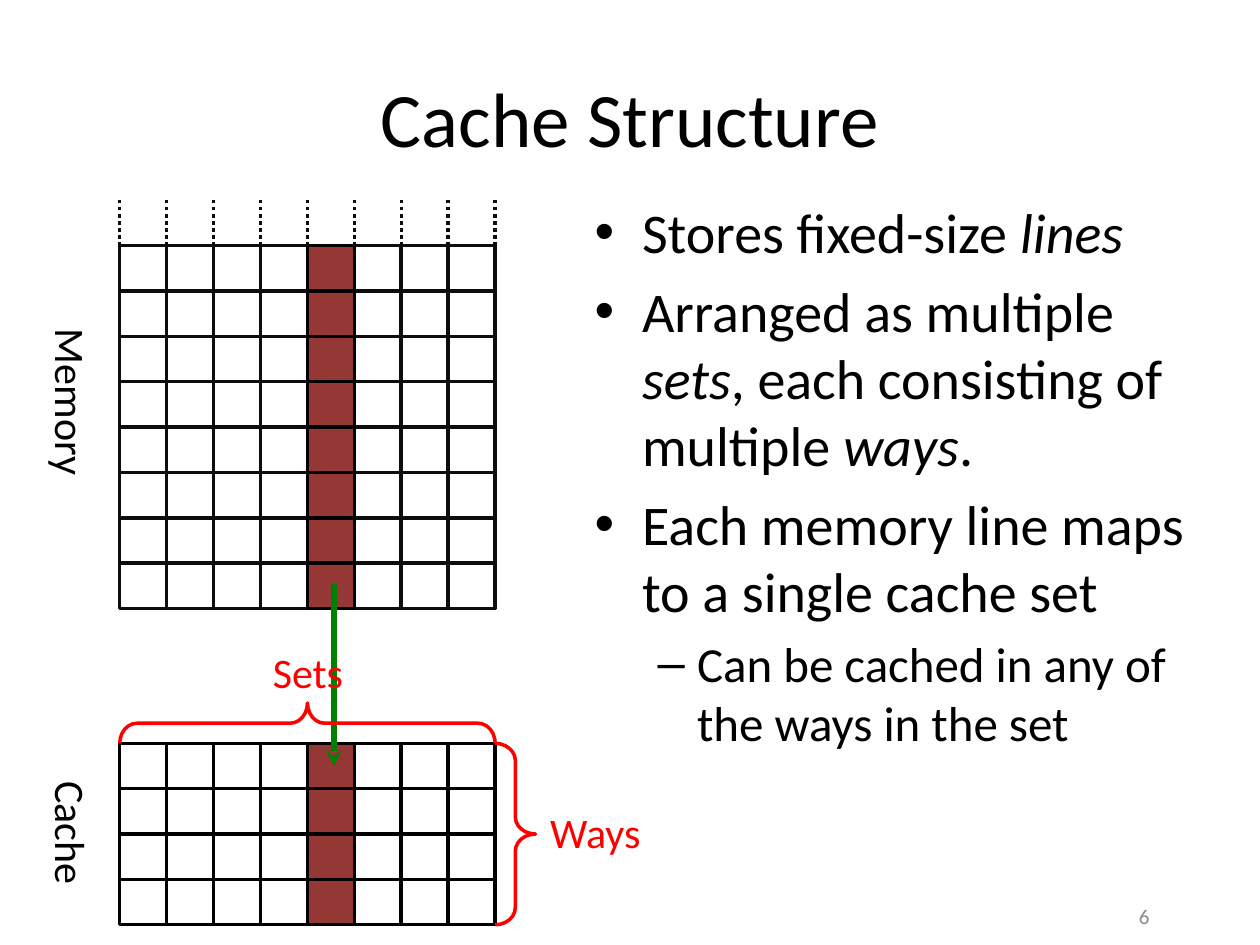
from lxml import etree
from pptx import Presentation, util as u
from pptx.dml.color import RGBColor
from pptx.enum import dml, shapes as s, text as t
from pptx.oxml.ns import qn

BLACK = RGBColor(0, 0, 0)
INK = RGBColor(0x0D, 0x0D, 0x0D)
WINE = RGBColor(0x95, 0x37, 0x35)
GREEN = RGBColor(0, 0x80, 0)
RED = RGBColor(0xFF, 0, 0)
GRAY = RGBColor(0x8C, 0x8C, 0x8C)
FONT = "Calibri"

deck = Presentation()
deck.slide_width, deck.slide_height = u.Inches(10), u.Inches(7.5)
slide = deck.slides.add_slide(deck.slide_layouts[1])
art = slide.shapes

# Grid: both tables share columns; one column is the marked set.
LEFT, COL, ROW = u.Inches(0.95), u.Inches(0.3725), u.Inches(0.36)
COLS, MARK = 8, 4
MEM, CACHE = u.Inches(1.95), u.Inches(5.9)
MEM_ROWS, WAYS = 8, 4
RIGHT = LEFT + COLS * COL
DEPTH = u.Inches(0.32)


def label(words, box, size, color, align=t.PP_ALIGN.CENTER, vert=None):
    frame = art.add_textbox(*box).text_frame
    frame.word_wrap = vert is not None
    if vert:
        frame._txBody.bodyPr.set("vert", vert)
    para = frame.paragraphs[0]
    para.text, para.alignment = words, align
    font = para.runs[0].font
    font.name, font.size, font.color.rgb = FONT, u.Pt(size), color
    return frame


def rule(x1, y1, x2, y2, color, width):
    line = art.add_connector(s.MSO_CONNECTOR.STRAIGHT, x1, y1, x2, y2)
    line.line.color.rgb, line.line.width = color, u.Pt(width)
    etree.SubElement(line._element.spPr, qn("a:effectLst"))
    return line.line


# Title and list
title = art.title
title.left, title.top = u.Inches(0.5), u.Inches(0.3)
title.width, title.height = u.Inches(9), u.Inches(1.25)
title.text_frame.text = "Cache Structure"

body = slide.placeholders[1]
body.left, body.top = u.Inches(4.62), u.Inches(1.52)
body.width, body.height = u.Inches(5.16), u.Inches(5.81)

# Every second part of an item is italic.
items = [
    (0, ["Stores fixed-size ", "lines"]),
    (0, ["Arranged as multiple ", "sets", ", each consisting of multiple ",
         "ways", "."]),
    (0, ["Each memory line maps to a single cache set"]),
    (1, ["Can be cached in any of the ways in the set"]),
]
for i, (level, parts) in enumerate(items):
    para = body.text_frame.paragraphs[0] if i == 0 else body.text_frame.add_paragraph()
    para.level = level
    for j, part in enumerate(parts):
        run = para.add_run()
        run.text = part
        run.font.size = u.Pt(28 if level else 32)
        if j % 2:
            run.font.italic = True
for frame in (title.text_frame, body.text_frame):
    for para in frame.paragraphs:
        for run in para.runs:
            run.font.name, run.font.color.rgb = FONT, BLACK
title.text_frame.paragraphs[0].runs[0].font.size = u.Pt(44)

# Memory and cache cells, the marked column last so that it lies on top
order = [c for c in range(COLS) if c != MARK] + [MARK]
for top, rows, ink in ((CACHE, WAYS, BLACK), (MEM, MEM_ROWS, INK)):
    for c in order:
        for r in range(rows):
            cell = art.add_shape(s.MSO_SHAPE.RECTANGLE,
                                 LEFT + c * COL, top + r * ROW, COL, ROW)
            cell.shadow.inherit = False
            cell.line.width = u.Pt(2)
            if c == MARK:
                cell.fill.solid()
                cell.fill.fore_color.rgb = WINE
                cell.line.color.rgb = BLACK
            else:
                cell.fill.background()
                cell.line.color.rgb = ink

# Dotted lines: memory goes on upwards
for c in range(COLS + 1):
    x = LEFT + c * COL
    rule(x, MEM, x, MEM - ROW, INK, 2).dash_style = dml.MSO_LINE.ROUND_DOT

# Side labels
for words, top in (("Memory", u.Inches(2.48)), ("Cache", CACHE)):
    label(words, (u.Inches(0.21), top, u.Inches(0.61), u.Inches(1.42)),
          24, BLACK, vert="vert")

# Arrow from the last memory line to its cache set
mid = u.Inches(2.65)
arrow = rule(mid, MEM + int(7.45 * ROW), mid, CACHE + ROW // 2, GREEN, 3)
etree.SubElement(arrow._get_or_add_ln(), qn("a:tailEnd"), type="stealth")

# Braces: the upper one is a left brace turned to point up
span, high = COLS * COL, WAYS * ROW
cx, cy = LEFT + span // 2, CACHE - DEPTH // 2
for kind, box, turn in (
    (s.MSO_SHAPE.LEFT_BRACE,
     (cx - DEPTH // 2, cy - span // 2, DEPTH, span), 90),
    (s.MSO_SHAPE.RIGHT_BRACE, (RIGHT, CACHE, DEPTH, high), 0),
):
    brace = art.add_shape(kind, *box)
    brace.rotation = turn
    brace.adjustments[0] = 0.427
    brace.shadow.inherit = False
    brace.fill.background()
    brace.line.color.rgb, brace.line.width = RED, u.Pt(2)

label("Sets", (u.Inches(2.06), u.Inches(5.08), u.Inches(0.77), u.Inches(0.5)), 24, RED)
label("Ways", (RIGHT + DEPTH, u.Inches(6.35), u.Inches(0.95), u.Inches(0.5)), 24, RED)

page = label("6", (u.Inches(8.94), u.Inches(7.01), u.Inches(0.72), u.Inches(0.52)),
             12, GRAY, t.PP_ALIGN.LEFT)
page.word_wrap = True
page.vertical_anchor = t.MSO_ANCHOR.MIDDLE

deck.save("out.pptx")
